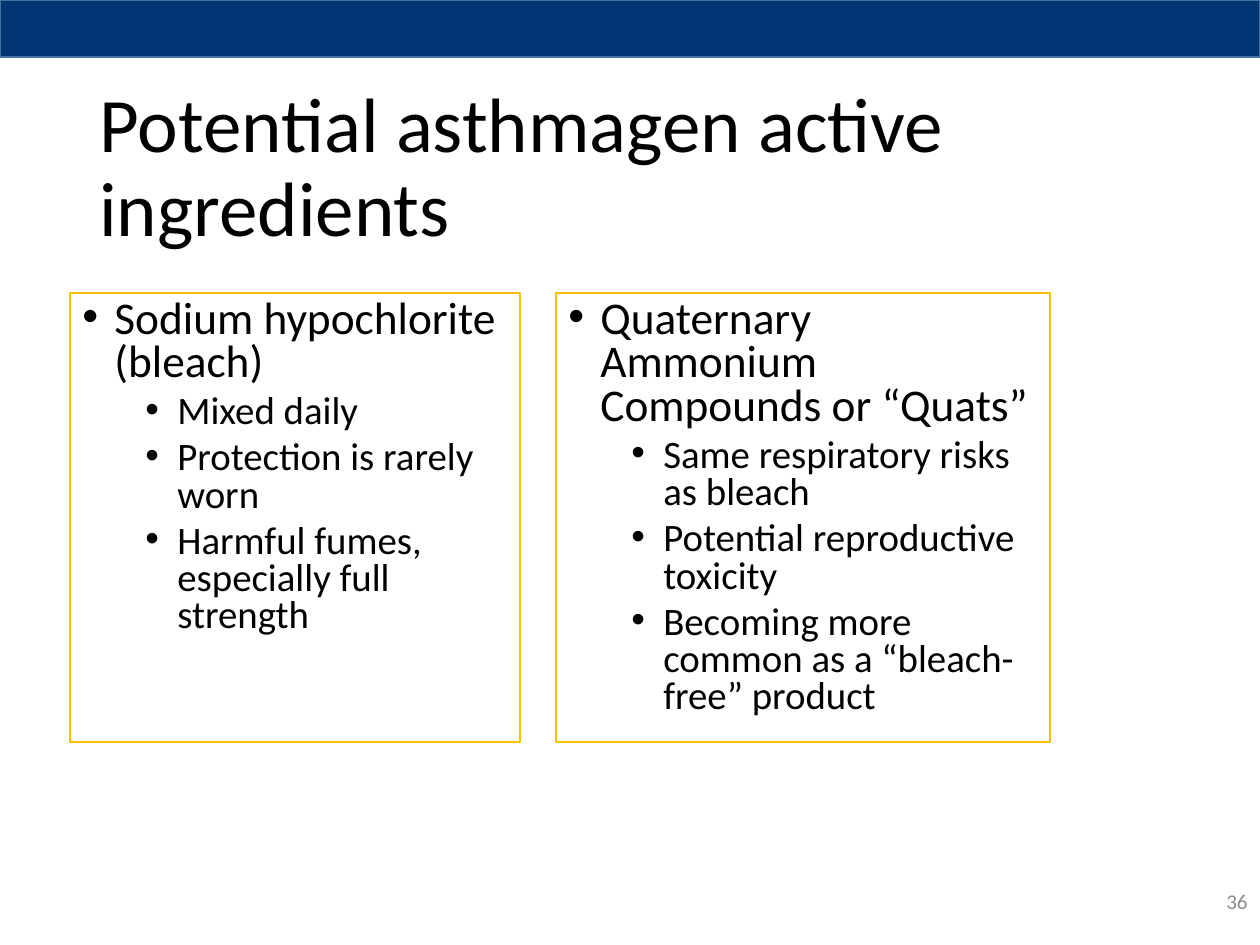
from lxml import etree
from pptx import Presentation
from pptx.dml.color import RGBColor
from pptx.enum.shapes import MSO_SHAPE
from pptx.enum.text import MSO_ANCHOR, PP_ALIGN
from pptx.oxml.ns import qn
from pptx.util import Emu, Pt

RECTANGLE = MSO_SHAPE.RECTANGLE
TOP, MIDDLE = MSO_ANCHOR.TOP, MSO_ANCHOR.MIDDLE
LEFT, RIGHT = PP_ALIGN.LEFT, PP_ALIGN.RIGHT

WHITE = RGBColor(0xFF, 0xFF, 0xFF)
BLACK = RGBColor(0x00, 0x00, 0x00)
GRAY = RGBColor(0x8C, 0x8C, 0x8C)
NAVY = RGBColor(0x00, 0x34, 0x73)
STEEL = RGBColor(0x43, 0x73, 0x9E)
AMBER = RGBColor(0xFF, 0xC0, 0x00)

FONT = "Calibri"
PX_PER_INCH = 126
BULLET_HANG = 32
# Per level: left margin in px, text size and space before in points
LEVELS = [(32, 25.9, 10), (95, 22.2, 5)]

PANEL_TOP, PANEL_HEIGHT = 293, 449
PANELS = [
    (70, 450, "Sodium hypochlorite (bleach)",
     ["Mixed daily",
      "Protection is rarely worn",
      "Harmful fumes, especially full strength"]),
    (556, 494, "Quaternary Ammonium Compounds or “Quats”",
     ["Same respiratory risks as bleach",
      "Potential reproductive toxicity",
      "Becoming more common as a “bleach-free” product"]),
]


def px(length):
    return Emu(round(length * 914400 / PX_PER_INCH))


def add_rectangle(slide, left, top, width, height, fill, line):
    shape = slide.shapes.add_shape(
        RECTANGLE, px(left), px(top), px(width), px(height))
    shape.shadow.inherit = False
    shape.fill.solid()
    shape.fill.fore_color.rgb = fill
    shape.line.color.rgb = line
    shape.line.width = Pt(1)
    return shape


def add_run(paragraph, text, size, color):
    run = paragraph.add_run()
    run.text = text
    run.font.name = FONT
    run.font.size = Pt(size)
    run.font.color.rgb = color


def add_label(slide, left, top, width, height, text, size, color,
              align=LEFT, line_spacing=1.0):
    box = slide.shapes.add_textbox(px(left), px(top), px(width), px(height))
    frame = box.text_frame
    frame.word_wrap = True
    frame.vertical_anchor = MIDDLE
    paragraph = frame.paragraphs[0]
    paragraph.alignment = align
    paragraph.line_spacing = line_spacing
    add_run(paragraph, text, size, color)


def format_bullet(paragraph, level):
    margin, size, space_before = LEVELS[level]
    properties = paragraph._p.get_or_add_pPr()
    properties.set("marL", str(px(margin)))
    properties.set("indent", str(px(-BULLET_HANG)))
    etree.SubElement(properties, qn("a:buFont")).set("typeface", "Arial")
    etree.SubElement(properties, qn("a:buChar")).set("char", "•")
    paragraph.level = level
    paragraph.alignment = LEFT
    paragraph.line_spacing = 0.8
    paragraph.space_before = Pt(space_before)
    return size


def add_panel(slide, left, width, heading, points):
    panel = add_rectangle(
        slide, left, PANEL_TOP, width, PANEL_HEIGHT, WHITE, AMBER)
    frame = panel.text_frame
    frame.word_wrap = True
    frame.vertical_anchor = TOP
    items = [(heading, 0)] + [(point, 1) for point in points]
    for index, (text, level) in enumerate(items):
        paragraph = frame.add_paragraph() if index else frame.paragraphs[0]
        size = format_bullet(paragraph, level)
        if index == 0:
            paragraph.space_before = Pt(0)
        add_run(paragraph, text, size, BLACK)


def main():
    presentation = Presentation()
    presentation.slide_width = px(1260)
    presentation.slide_height = px(945)
    slide = presentation.slides.add_slide(presentation.slide_layouts[6])

    add_label(slide, 87, 78, 1086, 183,
              "Potential asthmagen active ingredients", 44, BLACK,
              line_spacing=0.9)
    for left, width, heading, points in PANELS:
        add_panel(slide, left, width, heading, points)
    add_label(slide, 976, 876, 284, 50, "36", 12, GRAY, align=RIGHT)
    add_rectangle(slide, 0, 0, 1260, 57, NAVY, STEEL)

    presentation.save("out.pptx")


if __name__ == "__main__":
    main()
